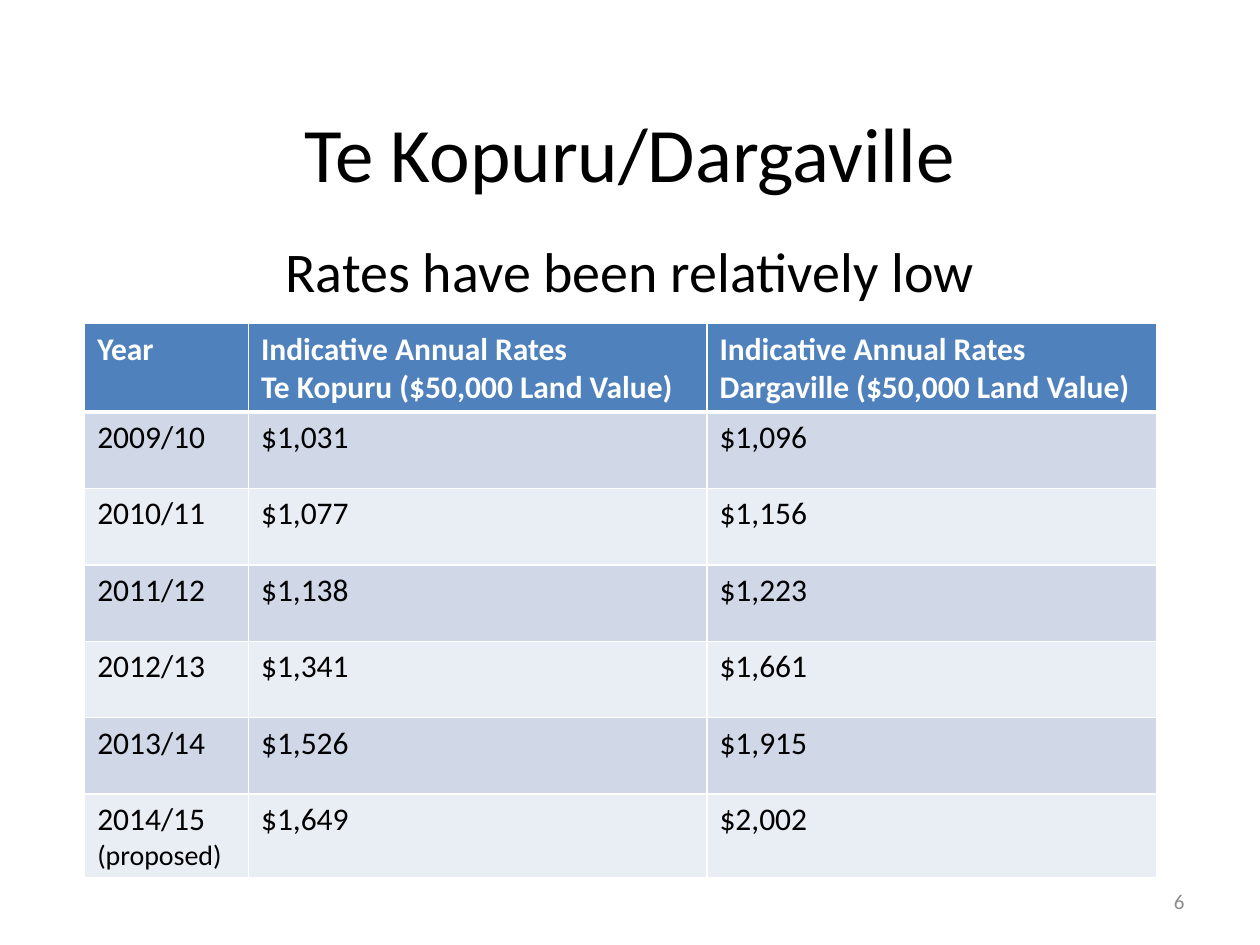
from lxml.etree import SubElement
from pptx import Presentation
from pptx.dml.color import RGBColor
from pptx.enum.text import MSO_ANCHOR, PP_ALIGN
from pptx.oxml.ns import qn
from pptx.util import Pt

WHITE, BLACK, GREY = "FFFFFF", "000000", "8C8C8C"
HEADER_BLUE, BANDS = "4F81BD", ("D0D8E8", "E9EDF4")

COLUMN_WIDTHS = (93.6, 262, 257)
ROW_HEIGHT = 43.7
RATES = [
    ("Year", "Indicative Annual Rates\vTe Kopuru ($50,000 Land Value)",
     "Indicative Annual Rates Dargaville ($50,000 Land Value)"),
    ("2009/10", "$1,031", "$1,096"),
    ("2010/11", "$1,077", "$1,156"),
    ("2011/12", "$1,138", "$1,223"),
    ("2012/13", "$1,341", "$1,661"),
    ("2013/14", "$1,526", "$1,915"),
    ("2014/15 ", "$1,649", "$2,002"),
]


def rgb(hex_code):
    return RGBColor.from_string(hex_code)


class RatesSlide:
    font_name = "Calibri"

    def __init__(self, slide):
        self.slide = slide

    def style(self, paragraph, size, color, bold=False):
        font = paragraph.font
        font.name, font.size, font.bold = self.font_name, Pt(size), bold
        font.color.rgb = rgb(color)

    def text(self, box, lines, color, align, gap=0, top_inset=3.6):
        """Add a middle-anchored box of (wording, size) lines."""
        frame = self.slide.shapes.add_textbox(*map(Pt, box)).text_frame
        frame.word_wrap = True
        frame.vertical_anchor = MSO_ANCHOR.MIDDLE
        frame.margin_top = Pt(top_inset)
        for index, (wording, size) in enumerate(lines):
            paragraph = frame.add_paragraph() if index else frame.paragraphs[0]
            paragraph.text = wording
            paragraph.alignment = align
            paragraph.space_before = Pt(gap if index else 0)
            self.style(paragraph, size, color)

    def border(self, cell, bottom_width):
        properties = cell._tc.get_or_add_tcPr()
        widths = {"a:lnL": 1, "a:lnR": 1, "a:lnT": 1, "a:lnB": bottom_width}
        for position, (side, width) in enumerate(widths.items()):
            line = SubElement(properties, qn(side), w=str(Pt(width)))
            fill = SubElement(line, qn("a:solidFill"))
            SubElement(fill, qn("a:srgbClr"), val=WHITE)
            properties.insert(position, line)

    def table(self, left, top, rows):
        table = self.slide.shapes.add_table(
            len(rows), len(COLUMN_WIDTHS), Pt(left), Pt(top),
            Pt(sum(COLUMN_WIDTHS)), Pt(ROW_HEIGHT * len(rows))).table
        for column, width in zip(table.columns, COLUMN_WIDTHS):
            column.width = Pt(width)
        for row_index, row in enumerate(rows):
            table.rows[row_index].height = Pt(ROW_HEIGHT)
            header = row_index == 0
            band = HEADER_BLUE if header else BANDS[(row_index - 1) % 2]
            for column_index, wording in enumerate(row):
                cell = table.cell(row_index, column_index)
                cell.text = wording
                cell.fill.solid()
                cell.fill.fore_color.rgb = rgb(band)
                self.border(cell, 3 if header else 1)
                self.style(cell.text_frame.paragraphs[0], 18,
                           WHITE if header else BLACK, header)
        return table


def main():
    deck = Presentation()
    deck.slide_width, deck.slide_height = Pt(720), Pt(540)
    page = RatesSlide(deck.slides.add_slide(deck.slide_layouts[6]))

    page.text((36, 21.6, 648, 185.8),
              [("Te Kopuru/Dargaville", 44),
               ("Rates have been relatively low", 32)],
              BLACK, PP_ALIGN.CENTER, gap=22, top_inset=8)
    rates = page.table(48.4, 185, RATES)
    last_year = rates.cell(len(RATES) - 1, 0).text_frame.paragraphs[0]
    proposed = last_year.add_run()
    proposed.text = "(proposed)"
    proposed.font.size = Pt(16)
    page.text((516, 500.4, 168, 28.8), [("6", 12)], GREY, PP_ALIGN.RIGHT)

    deck.save("out.pptx")


if __name__ == "__main__":
    main()
